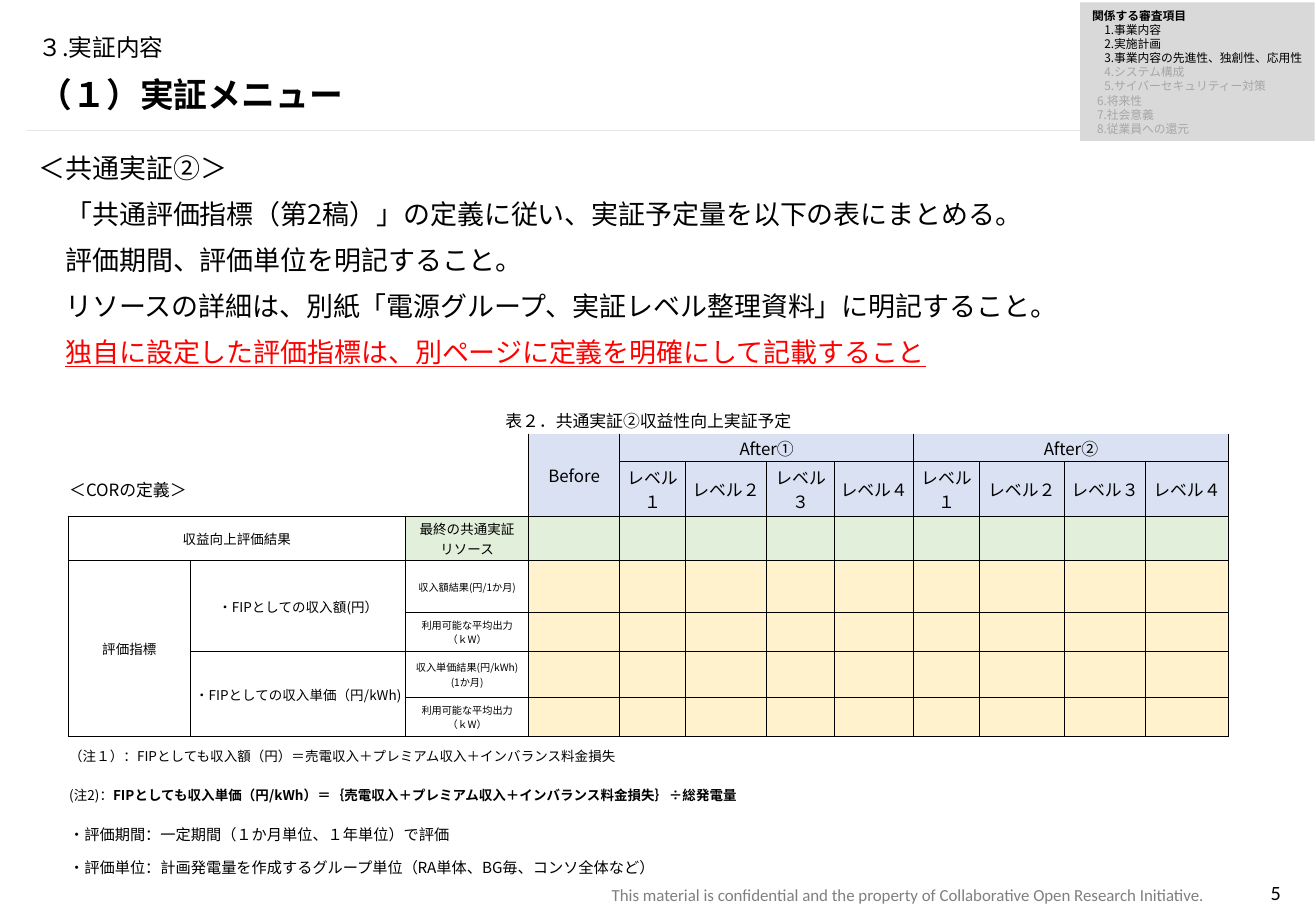
import pptx
import pptx.dml.color
import pptx.enum.shapes
import pptx.enum.text
import pptx.oxml.ns
import pptx.util
from dataclasses import dataclass
from lxml import etree

Inches, Pt = pptx.util.Inches, pptx.util.Pt
ALIGN, ANCHOR = pptx.enum.text.PP_ALIGN, pptx.enum.text.MSO_ANCHOR
qn = pptx.oxml.ns.qn


@dataclass(frozen=True)
class Theme:
    font: str = "Noto Sans CJK JP"
    footer_font: str = "Calibri"
    black: str = "000000"
    red: str = "FF0000"
    footer: str = "7F7F7F"
    muted: str = "A6A6A6"
    panel: str = "D9D9D9"
    rule: str = "E7E6E6"
    header: str = "D9E1F2"
    result: str = "E2EFDA"
    entry: str = "FFF2CC"
    white: str = "FFFFFF"
    heading: int = 20
    body: int = 16
    section: int = 14
    number: int = 12
    label: int = 10
    period: int = 9
    cell: int = 8
    side: int = 7
    small: int = 6


def rgb(color):
    return pptx.dml.color.RGBColor.from_string(color)


class SlideBuilder:
    def __init__(self, slide, theme):
        self.s, self.t = slide, theme

    def style(self, p, size, color=None, bold=False, underline=False, font=None,
              align=ALIGN.LEFT, indent=0, spacing=None, before=0):
        p.alignment = align
        p.space_before = Pt(before)
        if spacing:
            p.line_spacing = spacing
        f = p.font
        f.size, f.bold, f.underline = Pt(size), bold, underline
        f.color.rgb = rgb(color or self.t.black)
        f.name = font or self.t.font
        pPr = p._p.get_or_add_pPr()
        pPr.set("marL", str(Inches(indent)))
        pPr.set("indent", "0")
        etree.SubElement(pPr.find(qn("a:defRPr")), qn("a:ea"), typeface=f.name)

    def fill_text(self, tf, lines):
        """Fill a text frame with (text, style) pairs, one per paragraph."""
        for i, (text, look) in enumerate(lines):
            p = tf.paragraphs[0] if i == 0 else tf.add_paragraph()
            p.add_run().text = text
            self.style(p, **look)

    def text(self, box, lines, anchor=ANCHOR.TOP):
        tf = self.s.shapes.add_textbox(*map(Inches, box)).text_frame
        tf.word_wrap, tf.vertical_anchor = True, anchor
        self.fill_text(tf, lines)
        return tf

    def panel(self, box, lines):
        sp = self.s.shapes.add_shape(
            pptx.enum.shapes.MSO_SHAPE.RECTANGLE, *map(Inches, box))
        sp.shadow.inherit = False
        sp.fill.solid()
        sp.fill.fore_color.rgb = rgb(self.t.panel)
        sp.line.fill.background()
        tf = sp.text_frame
        tf.word_wrap, tf.vertical_anchor, tf.margin_right = True, ANCHOR.TOP, 0
        self.fill_text(tf, lines)

    def line(self, x1, y1, x2, y2):
        c = self.s.shapes.add_connector(
            pptx.enum.shapes.MSO_CONNECTOR.STRAIGHT, *map(Inches, (x1, y1, x2, y2)))
        c.line.color.rgb, c.line.width = rgb(self.t.rule), Pt(0.25)
        etree.SubElement(c._element.spPr, qn("a:effectLst"))

    def table(self, x, y, cols, rows):
        tbl = self.s.shapes.add_table(len(rows), len(cols), Inches(x), Inches(y),
                                      Inches(sum(cols)), Inches(sum(rows))).table
        tbl.first_row = tbl.horz_banding = False
        for col, width in zip(tbl.columns, cols):
            col.width = Inches(width)
        for row, height in zip(tbl.rows, rows):
            row.height = Inches(height)
        return tbl

    def cell(self, cell, lines, edges, fill):
        cell.margin_left = cell.margin_right = cell.margin_top = Inches(0.01)
        cell.margin_bottom = 0
        cell.vertical_anchor = ANCHOR.MIDDLE
        tcPr = cell._tc.get_or_add_tcPr()
        for side, shown in edges.items():
            ln = etree.SubElement(tcPr, qn("a:ln" + side), w=str(Pt(0.5)))
            if shown:
                paint = etree.SubElement(ln, qn("a:solidFill"))
                etree.SubElement(paint, qn("a:srgbClr"), val=self.t.black)
            else:
                etree.SubElement(ln, qn("a:noFill"))
        if fill:
            cell.fill.solid()
            cell.fill.fore_color.rgb = rgb(fill)
        else:
            cell.fill.background()
        if lines:
            self.fill_text(cell.text_frame, lines)
        else:
            etree.SubElement(cell.text_frame.paragraphs[0]._p, qn("a:endParaRPr"),
                             sz=str(self.t.cell * 100))


def table_texts(t):
    """Cell contents by (row, column)."""
    def centred(size, *lines):
        return [(line, dict(size=size, align=ALIGN.CENTER)) for line in lines]

    def left(size, line):
        return [(line, dict(size=size))]

    output = centred(t.small, "利用可能な平均出力", "（ｋW）")
    texts = {
        (0, 0): centred(t.label, "表２．共通実証②収益性向上実証予定"),
        (1, 4): centred(t.label, "Before"),
        (1, 5): centred(t.label, "After①"),
        (1, 9): centred(t.label, "After②"),
        (2, 0): left(t.label, "＜CORの定義＞"),
        (3, 0): centred(t.cell, "収益向上評価結果"),
        (3, 3): centred(t.cell, "最終の共通実証", "リソース"),
        (4, 0): centred(t.cell, "評価指標"),
        (4, 1): centred(t.cell, "・FIPとしての収入額(円）"),
        (4, 3): centred(t.small, "収入額結果(円/1か月)"),
        (5, 3): output,
        (6, 1): centred(t.cell, "・FIPとしての収入単価（円/kWh)"),
        (6, 3): centred(t.small, "収入単価結果(円/kWh)", "(1か月)"),
        (7, 3): output,
        (8, 0): left(t.cell, "（注１）：FIPとしても収入額（円）＝売電収入＋プレミアム収入＋インバランス料金損失"),
        (9, 0): left(t.cell, "(注2)："),
        (10, 0): left(t.period, "・評価期間：一定期間（１か月単位、１年単位）で評価"),
        (11, 0): left(t.period, "・評価単位：計画発電量を作成するグループ単位（RA単体、BG毎、コンソ全体など）"),
    }
    for i in range(8):
        texts[2, 5 + i] = centred(t.label, "レベル" + "１２３４"[i % 4])
    return texts


def in_grid(r, c):
    return 3 <= r <= 7 and 0 <= c <= 12 or r in (1, 2) and 4 <= c <= 12


def edges(r, c):
    here = in_grid(r, c)
    return {"L": here or in_grid(r, c - 1), "R": here or in_grid(r, c + 1),
            "T": r > 1 and (here or in_grid(r - 1, c)),
            "B": r > 0 and (here or in_grid(r + 1, c))}


def cell_fill(t, r, c):
    if r in (1, 2) and c >= 4:
        return t.header
    if r == 3:
        return t.result if c >= 3 else t.white
    return t.entry if 4 <= r <= 7 and c >= 4 else None


def main():
    t = Theme()
    prs = pptx.Presentation()
    prs.slide_width, prs.slide_height = Inches(10.83), Inches(7.5)
    b = SlideBuilder(prs.slides.add_slide(prs.slide_layouts[6]), t)

    # Rule and footer
    b.line(0.22, 1.07, 10.61, 1.07)
    footer = dict(font=t.footer_font, align=ALIGN.RIGHT)
    tf = b.text((9.75, 7.2, 0.79, 0.3), [("5", dict(size=t.number, **footer))])
    tf.margin_left = tf.margin_right = 0
    notice = "This material is confidential and the property of Collaborative Open Research Initiative."
    b.text((3.72, 7.23, 6.28, 0.27),
           [(notice, dict(size=t.label, color=t.footer, **footer))])

    # Instructions
    body = dict(size=t.body, spacing=0.9, before=10)
    item = dict(body, indent=0.22)
    b.text((0.22, 1.23, 10.4, 2.05), [
        ("＜共通実証②＞", body),
        ("「共通評価指標（第2稿）」の定義に従い、実証予定量を以下の表にまとめる。", item),
        ("評価期間、評価単位を明記すること。", item),
        ("リソースの詳細は、別紙「電源グループ、実証レベル整理資料」に明記すること。", item),
        ("独自に設定した評価指標は、別ページに定義を明確にして記載すること",
         dict(item, color=t.red, underline=True))])

    # Titles
    b.text((0.22, 0.21, 10.39, 0.39),
           [("３.実証内容", dict(size=t.section, spacing=0.9))], ANCHOR.MIDDLE)
    b.text((0.22, 0.6, 10.4, 0.39),
           [("（１）実証メニュー", dict(size=t.heading, bold=True, spacing=0.8))],
           ANCHOR.BOTTOM)

    # Plan table
    cols = [1.01, 1.01, 0.76, 1.01, 0.75, 0.54, 0.67, 0.56, 0.65, 0.54, 0.7, 0.67, 0.68]
    rows = [0.23, 0.23, 0.45, 0.36, 0.43, 0.32, 0.38, 0.32, 0.32, 0.32, 0.32, 0.23]
    tbl = b.table(0.56, 3.34, cols, rows)
    texts = table_texts(t)
    for r in range(len(rows)):
        for c in range(len(cols)):
            b.cell(tbl.cell(r, c), texts.get((r, c)), edges(r, c), cell_fill(t, r, c))
    run = tbl.cell(9, 0).text_frame.paragraphs[0].add_run()
    run.text = "FIPとしても収入単価（円/kWh）＝｛売電収入＋プレミアム収入＋インバランス料金損失｝÷総発電量"
    run.font.bold = True
    for r1, c1, r2, c2 in [(0, 0, 0, 12), (1, 4, 2, 4), (1, 5, 1, 8), (1, 9, 1, 12),
                           (2, 0, 2, 1), (3, 0, 3, 2), (4, 0, 7, 0), (4, 1, 5, 2),
                           (6, 1, 7, 2), (8, 0, 8, 5), (9, 0, 9, 8), (10, 0, 10, 4),
                           (11, 0, 11, 6)]:
        tbl.cell(r1, c1).merge(tbl.cell(r2, c2))

    # Review criteria panel
    criteria = ["事業内容", "実施計画", "事業内容の先進性、独創性、応用性", "システム構成",
                "サイバーセキュリティー対策", "将来性", "社会意義", "従業員への還元"]
    lines = [("関係する審査項目", dict(size=t.side, bold=True))]
    for n, name in enumerate(criteria, 1):
        lines.append((f"{n}.{name}", dict(size=t.side, indent=0.1 if n <= 5 else 0.04,
                                          color=t.black if n <= 3 else t.muted)))
    b.panel((8.89, 0.02, 1.93, 1.14), lines)

    prs.save("out.pptx")


if __name__ == "__main__":
    main()
